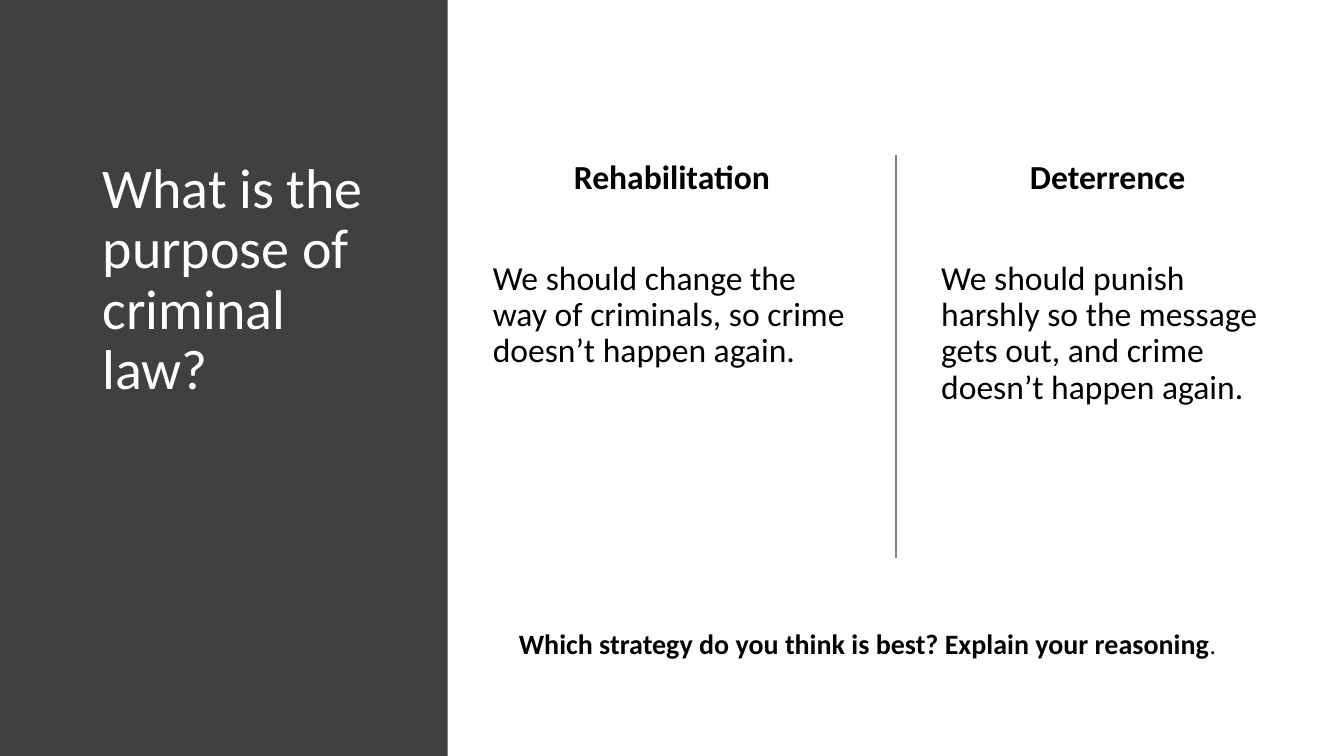
import dataclasses

import pptx
import pptx.dml.color
import pptx.enum.shapes
import pptx.enum.text
import pptx.oxml
import pptx.oxml.ns
import pptx.util

Cm = pptx.util.Cm
Pt = pptx.util.Pt
RGB = pptx.dml.color.RGBColor
ALIGN = pptx.enum.text.PP_ALIGN


@dataclasses.dataclass(frozen=True)
class Theme:
    font: str = "Calibri"
    panel: RGB = RGB(0x40, 0x40, 0x40)
    light: RGB = RGB(0xFF, 0xFF, 0xFF)
    dark: RGB = RGB(0, 0, 0)
    rule: RGB = RGB(0x80, 0x80, 0x80)
    title: int = 40
    body: int = 24
    question: int = 20
    stop: int = 18


class Deck:
    def __init__(self, theme):
        self.theme = theme
        self.prs = pptx.Presentation()
        self.prs.slide_width = Cm(33.87)
        self.prs.slide_height = Cm(19.05)
        self.s = self.prs.slides.add_slide(self.prs.slide_layouts[6])

    def panel(self, width):
        sp = self.s.shapes.add_shape(
            pptx.enum.shapes.MSO_SHAPE.RECTANGLE, 0, 0, Cm(width), self.prs.slide_height)
        sp.shadow.inherit = False
        sp.fill.solid()
        sp.fill.fore_color.rgb = self.theme.panel
        sp.line.fill.background()

    def divider(self, x, top, height):
        line = self.s.shapes.add_connector(
            pptx.enum.shapes.MSO_CONNECTOR.STRAIGHT, Cm(x), Cm(top), Cm(x), Cm(top + height))
        line.line.color.rgb = self.theme.rule
        line.line.width = Pt(1)
        effects = pptx.oxml.parse_xml(f'<a:effectLst {pptx.oxml.ns.nsdecls("a")}/>')
        line._element.spPr.append(effects)

    def text_box(self, left, top, width, height):
        tf = self.s.shapes.add_textbox(Cm(left), Cm(top), Cm(width), Cm(height)).text_frame
        tf.word_wrap = True
        return tf

    def paragraph(self, p, runs, color, align=ALIGN.LEFT, spacing=0.9, before=0):
        """Fill p with runs given as (text, size, bold)."""
        p.alignment = align
        p.line_spacing = spacing
        p.space_before = Pt(before)
        for text, size, bold in runs:
            r = p.add_run()
            r.text = text
            r.font.name = self.theme.font
            r.font.size = Pt(size)
            r.font.bold = bold
            r.font.color.rgb = color

    def title(self, text, *box):
        tf = self.text_box(*box)
        self.paragraph(tf.paragraphs[0], [(text, self.theme.title, False)], self.theme.light)

    def column(self, heading, text, *box):
        tf = self.text_box(*box)
        t = self.theme
        self.paragraph(tf.paragraphs[0], [(heading, t.body, True)], t.dark, ALIGN.CENTER)
        self.paragraph(tf.add_paragraph(), [(text, t.body, False)], t.dark, before=46.4)

    def question(self, text, *box):
        tf = self.text_box(*box)
        t = self.theme
        runs = [(text, t.question, True), (".", t.stop, False)]
        self.paragraph(tf.paragraphs[0], runs, t.dark, ALIGN.CENTER, spacing=1.0)


def main():
    top, column_height = 3.91, 10.16
    left = 12.17
    deck = Deck(Theme())
    deck.panel(11.28)
    deck.title("What is the purpose of criminal law?", 2.34, top, 8, 12.12)
    deck.column("Rehabilitation",
                "We should change the way of criminals, so crime doesn’t happen again.",
                left, top, 9.53, column_height)
    deck.divider(22.58, top, column_height)
    deck.column("Deterrence",
                "We should punish harshly so the message gets out, and crime doesn’t happen again.",
                23.47, top, 8.89, column_height)
    deck.question("Which strategy do you think is best? Explain your reasoning",
                  left, 15.67, 19.38, 1.12)
    deck.prs.save("out.pptx")


if __name__ == "__main__":
    main()
